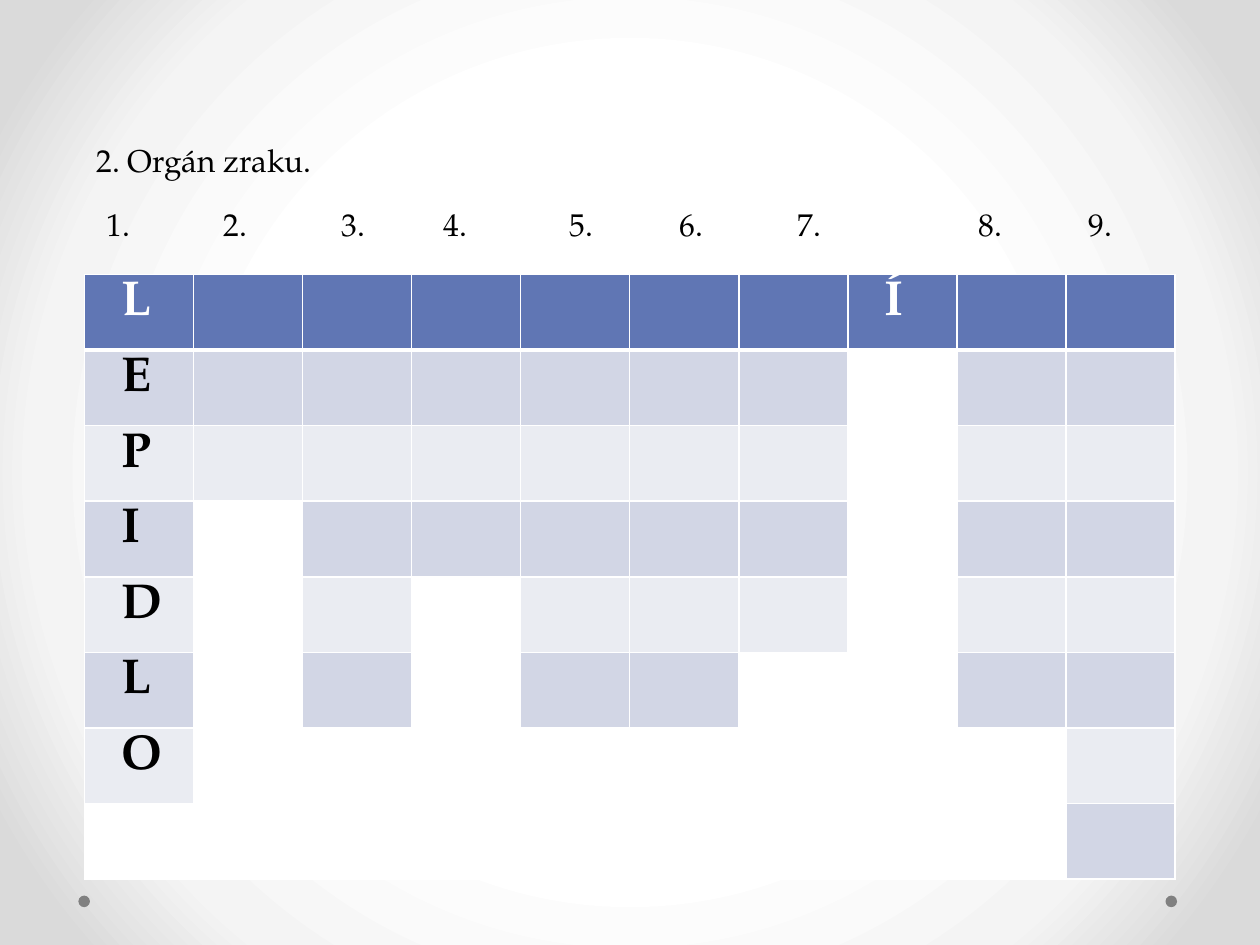
from lxml import etree
from pptx import Presentation
from pptx.dml.color import RGBColor
from pptx.enum.shapes import MSO_SHAPE
from pptx.enum.text import MSO_AUTO_SIZE
from pptx.oxml import parse_xml
from pptx.oxml.ns import nsdecls, qn
from pptx.util import Pt

OVAL = MSO_SHAPE.OVAL
GROW = MSO_AUTO_SIZE.SHAPE_TO_FIT_TEXT
FONT = "TeX Gyre Pagella"
COLORS = {"white": "FFFFFF", "mist": "F4F4F4", "edge": "DADADA", "dot": "808080",
          "text": "000000", "header": "6076B4", "odd": "D2D6E5", "even": "EAECF2"}

ROWS = 8
WORD_LENGTHS = [7, 3, 6, 4, 6, 6, 5, 1, 6, 8]
LETTERS = {0: "LEPIDLO", 7: "Í"}
# Offsets of the numbers 2 to 9 from the number 1
NUMBER_TABS = [66.8, 134.2, 192.5, 264.5, 327.4, 394.8, 498.2, 561.1]


def rgb(name):
    return RGBColor.from_string(COLORS[name])


def format_run(r, size, color="text", bold=False):
    r.font.name = FONT
    r.font.size = Pt(size)
    r.font.bold = bold
    r.font.color.rgb = rgb(color)


def set_background(slide):
    """Radial gradient, white in the middle and grey at the corners."""
    slide.background.fill.solid()
    bg = slide.element.find(".//" + qn("p:bgPr"))
    stops = "".join(
        f'<a:gs pos="{pos * 1000}"><a:srgbClr val="{COLORS[name]}"/></a:gs>'
        for pos, name in ((50, "white"), (76, "mist"), (92, "edge")))
    grad = parse_xml(
        f'<a:gradFill {nsdecls("a")} rotWithShape="1"><a:gsLst>{stops}</a:gsLst>'
        '<a:path path="circle"><a:fillToRect l="50000" t="50000" r="50000" b="50000"/>'
        '</a:path></a:gradFill>')
    bg.replace(bg.find(qn("a:solidFill")), grad)


def add_dot(slide, x, y, size):
    sp = slide.shapes.add_shape(OVAL, Pt(x), Pt(y), Pt(size), Pt(size))
    sp.shadow.inherit = False
    sp.fill.solid()
    sp.fill.fore_color.rgb = rgb("dot")
    sp.line.fill.background()


def add_line_of_text(slide, text, x, y, w, h):
    tb = slide.shapes.add_textbox(Pt(x), Pt(y), Pt(w), Pt(h))
    tf = tb.text_frame
    tf.word_wrap = False
    tf.auto_size = GROW
    p = tf.paragraphs[0]
    p.text = text
    for r in p.runs:
        format_run(r, 18)
    return p


def add_numbers(slide, x, y, w, h):
    """Column numbers, each at its own tab stop."""
    numbers = "\t".join(f"{n}." for n in range(1, len(NUMBER_TABS) + 2))
    p = add_line_of_text(slide, numbers, x, y, w, h)
    tabs = etree.Element(qn("a:tabLst"))
    for pos in NUMBER_TABS:
        etree.SubElement(tabs, qn("a:tab"), pos=str(Pt(pos)), algn="l")
    p._p.get_or_add_pPr().append(tabs)


def set_borders(cell, bottom):
    tc_pr = cell._tc.get_or_add_tcPr()
    for i, (side, width) in enumerate((("L", 1), ("R", 1), ("T", 1), ("B", bottom))):
        ln = parse_xml(
            f'<a:ln{side} {nsdecls("a")} w="{Pt(width)}"><a:solidFill>'
            f'<a:srgbClr val="{COLORS["white"]}"/></a:solidFill></a:ln{side}>')
        tc_pr.insert(i, ln)


def cell_color(row, col):
    if row >= WORD_LENGTHS[col]:
        return "white"
    if row == 0:
        return "header"
    return "odd" if row % 2 else "even"


def add_crossword(slide, x, y, w, h):
    """Grid with one word running down each column."""
    cols = len(WORD_LENGTHS)
    table = slide.shapes.add_table(ROWS, cols, Pt(x), Pt(y), Pt(w), Pt(h)).table
    for column in table.columns:
        column.width = Pt(w / cols)
    for i, row in enumerate(table.rows):
        row.height = Pt(h / ROWS)
        for j, cell in enumerate(row.cells):
            cell.fill.solid()
            cell.fill.fore_color.rgb = rgb(cell_color(i, j))
            set_borders(cell, bottom=1 if i else 3)
            word = LETTERS.get(j, "")
            if i < len(word):
                cell.margin_left = Pt(21.2)
                p = cell.text_frame.paragraphs[0]
                p.text = word[i]
                format_run(p.runs[0], 28, "text" if i else "white", bold=True)


def main():
    prs = Presentation()
    prs.slide_width, prs.slide_height = Pt(720), Pt(540)
    slide = prs.slides.add_slide(prs.slide_layouts[6])
    set_background(slide)
    for x in (666, 44.8):
        add_dot(slide, x, 511.8, 6.6)
    add_crossword(slide, 48.2, 156.8, 623.6, 345.6)
    add_numbers(slide, 54, 113.8, 610, 29)
    add_line_of_text(slide, "2. Orgán zraku.", 48, 77.2, 140, 29)
    prs.save("out.pptx")


if __name__ == "__main__":
    main()
